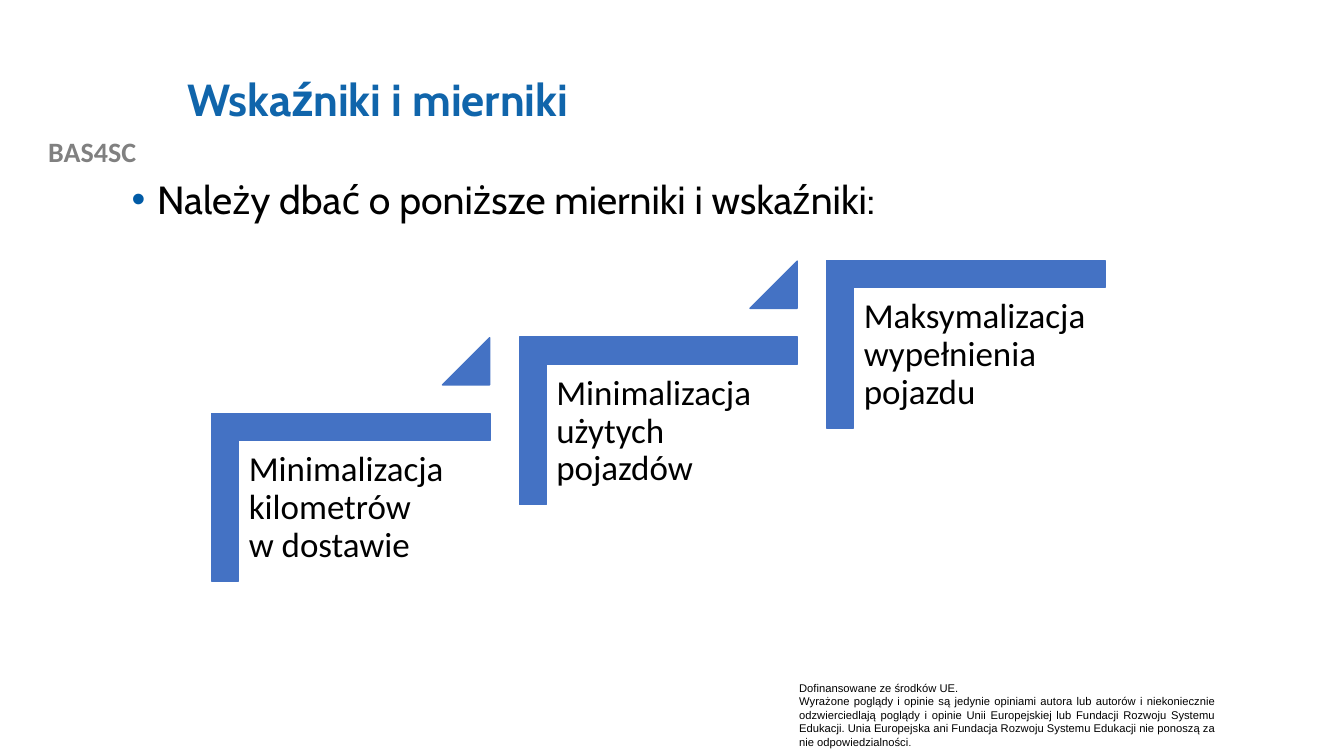
from lxml.etree import SubElement
from pptx import Presentation
from pptx.dml.color import RGBColor
from pptx.enum.shapes import MSO_SHAPE as Shape
from pptx.enum.text import MSO_ANCHOR as Anchor, PP_ALIGN as Align
from pptx.oxml.ns import qn
from pptx.util import Cm, Pt

PROJECT = "BAS4SC"
TITLE = "Wskaźniki i mierniki"
LEAD = "Należy dbać o poniższe mierniki i wskaźniki:"
STEPS = [
    ["Minimalizacja kilometrów", "w dostawie"],
    ["Minimalizacja użytych pojazdów"],
    ["Maksymalizacja wypełnienia pojazdu"],
]
FUNDING = "Dofinansowane ze środków UE."
DISCLAIMER = (
    "Wyrażone poglądy i opinie są jedynie opiniami autora lub autorów i niekoniecznie "
    "odzwierciedlają poglądy i opinie Unii Europejskiej lub Fundacji Rozwoju Systemu "
    "Edukacji. Unia Europejska ani Fundacja Rozwoju Systemu Edukacji nie ponoszą za "
    "nie odpowiedzialności"
)
COLORS = {"project": "808080", "title": "1065AB", "bullet": "015BA6",
          "step": "4472C4", "text": "000000"}

STEP_RIGHT, STEP_UP = 7.75, 1.93
CORNER = (6.73, 9.03, 4.22, 7.01)
LABEL = (6.02, 11.13, 6.32, 5.56)
RISE = (11.15, 8.51, 1.19, 1.19)


def add_box(slide, left, top, width, height, inset=0.13):
    frame = slide.shapes.add_textbox(Cm(left), Cm(top), Cm(width), Cm(height)).text_frame
    frame.word_wrap = True
    frame.margin_top = frame.margin_bottom = Cm(inset)
    return frame


def add_run(paragraph, text, size, font, color="text", bold=False):
    run = paragraph.add_run()
    run.text = text
    run.font.size = Pt(size)
    run.font.name = font
    run.font.bold = bold
    run.font.color.rgb = RGBColor.from_string(COLORS[color])


def add_step_shape(slide, preset, place, adjustments, rotation=0):
    shape = slide.shapes.add_shape(preset, *map(Cm, place))
    shape.shadow.inherit = False
    shape.rotation = rotation
    for index, value in enumerate(adjustments):
        shape.adjustments[index] = value
    step_color = RGBColor.from_string(COLORS["step"])
    shape.fill.solid()
    shape.fill.fore_color.rgb = step_color
    shape.line.color.rgb = step_color
    shape.line.width = Pt(1)


def add_bullet(paragraph):
    properties = paragraph._p.get_or_add_pPr()
    properties.set("marL", str(Cm(0.64)))
    properties.set("indent", str(-Cm(0.64)))
    color = SubElement(properties, qn("a:buClr"))
    SubElement(color, qn("a:srgbClr"), val=COLORS["bullet"])
    SubElement(properties, qn("a:buFont"), typeface="Arial")
    SubElement(properties, qn("a:buChar"), char="•")


def main():
    """Build the slide on delivery metrics and save it."""
    deck = Presentation()
    deck.slide_width, deck.slide_height = Cm(33.87), Cm(19.05)
    slide = deck.slides.add_slide(deck.slide_layouts[6])

    project = add_box(slide, 0, 3.25, 4.65, 1.12).paragraphs[0]
    project.alignment = Align.CENTER
    add_run(project, PROJECT, 20, "Calibri", "project", True)

    footer = add_box(slide, 19.89, 17.04, 11, 1.96)
    funding, disclaimer = footer.paragraphs[0], footer.add_paragraph()
    funding.alignment = disclaimer.alignment = Align.JUSTIFY
    add_run(funding, FUNDING, 8, "Arial")
    add_run(disclaimer, DISCLAIMER, 8, "Arial")
    add_run(disclaimer, ".", 7, "Arial")

    heading = add_box(slide, 4.47, 1.02, 27.08, 3.1)
    heading.vertical_anchor = Anchor.MIDDLE
    title = heading.paragraphs[0]
    title.line_spacing = 0.9
    add_run(title, TITLE, 32, "Cabin", "title", True)

    lead = add_box(slide, 3.07, 4.42, 29.21, 12.09).paragraphs[0]
    lead.line_spacing = 0.9
    add_bullet(lead)
    add_run(lead, LEAD, 28, "Cabin")

    for number, lines in enumerate(STEPS):
        corner, label_place, rise = (
            (left + number * STEP_RIGHT, top - number * STEP_UP, width, height)
            for left, top, width, height in (CORNER, LABEL, RISE)
        )
        add_step_shape(slide, Shape.CORNER, corner, [0.161, 0.161], 90)
        label = add_box(slide, *label_place, inset=0.25).paragraphs[0]
        label.line_spacing = 0.9
        for line_number, line in enumerate(lines):
            if line_number:
                label.add_line_break()
            add_run(label, line, 25, "Calibri")
        if number < len(STEPS) - 1:
            add_step_shape(slide, Shape.ISOSCELES_TRIANGLE, rise, [1])

    deck.save("out.pptx")


if __name__ == "__main__":
    main()
